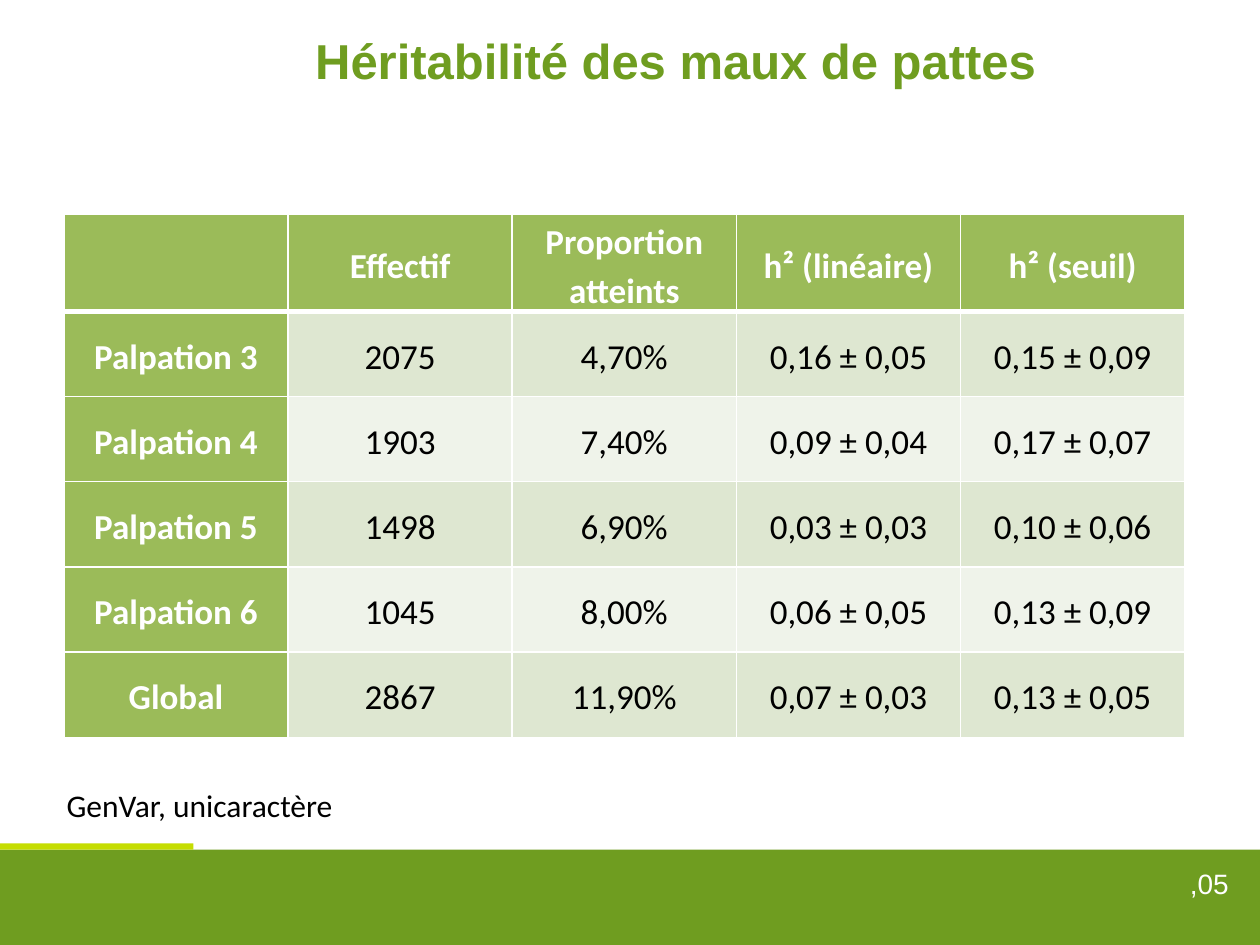
from lxml.etree import SubElement
from pptx import Presentation
from pptx.dml.color import RGBColor
from pptx.enum.shapes import MSO_SHAPE as Preset
from pptx.enum.text import MSO_ANCHOR as Anchor, PP_ALIGN as Align
from pptx.oxml.ns import qn
from pptx.util import Pt

WHITE, BLACK = "FFFFFF", "000000"
GREEN, LIME, HEADING = "6F9D20", "C5DD01", "9BBB59"
BANDS = ["DEE7D1", "EFF3EA"]

HERITABILITY = [
    ["", "Effectif", "Proportion atteints", "h² (linéaire)", "h² (seuil)"],
    ["Palpation 3", "2075", "4,70%", "0,16 ± 0,05", "0,15 ± 0,09"],
    ["Palpation 4", "1903", "7,40%", "0,09 ± 0,04", "0,17 ± 0,07"],
    ["Palpation 5", "1498", "6,90%", "0,03 ± 0,03", "0,10 ± 0,06"],
    ["Palpation 6", "1045", "8,00%", "0,06 ± 0,05", "0,13 ± 0,09"],
    ["Global", "2867", "11,90%", "0,07 ± 0,03", "0,13 ± 0,05"],
]


def color(hex_value):
    return RGBColor.from_string(hex_value)


def apply(target, formats):
    for name, value in formats.items():
        setattr(target, name, value)


def paint(item, hex_value):
    item.fill.solid()
    item.fill.fore_color.rgb = color(hex_value)


class SlideBuilder:
    heading_font = "Arial"
    body_font = "Calibri"
    cell_format = {
        "vertical_anchor": Anchor.MIDDLE,
        "margin_left": Pt(5), "margin_right": Pt(5),
        "margin_top": 0, "margin_bottom": 0,
    }

    def __init__(self, slide):
        self.slide = slide

    def add_text(self, frame, text, size, font, ink, bold=False, **paragraph_format):
        frame.word_wrap = True
        paragraph = frame.paragraphs[0]
        apply(paragraph, paragraph_format)
        run = paragraph.add_run()
        run.text = text
        apply(run.font, {"size": Pt(size), "name": font, "bold": bold})
        run.font.color.rgb = color(ink)

    def title(self, text, left, top, width, height):
        heading = self.slide.shapes.title
        apply(heading, {"left": Pt(left), "top": Pt(top),
                        "width": Pt(width), "height": Pt(height)})
        paint(heading, WHITE)
        heading.text_frame.vertical_anchor = Anchor.MIDDLE
        self.add_text(heading.text_frame, text, 28, self.heading_font, GREEN,
                      bold=True, alignment=Align.CENTER)

    def bar(self, hex_value, *box):
        band = self.slide.shapes.add_shape(Preset.RECTANGLE, *map(Pt, box))
        band.shadow.inherit = False
        paint(band, hex_value)
        band.line.fill.background()

    def label(self, text, box, size, font, ink, align=Align.LEFT):
        frame = self.slide.shapes.add_textbox(*map(Pt, box)).text_frame
        self.add_text(frame, text, size, font, ink, alignment=align)

    def border(self, cell, widths):
        properties = cell._tc.get_or_add_tcPr()
        for side, width in widths.items():
            line = SubElement(properties, qn(f"a:ln{side}"), w=str(Pt(width)))
            fill = SubElement(line, qn("a:solidFill"))
            SubElement(fill, qn("a:srgbClr"), val=WHITE)

    def table(self, rows, left, top, width, header_height, row_height):
        heights = [header_height] + [row_height] * (len(rows) - 1)
        grid = self.slide.shapes.add_table(
            len(rows), len(rows[0]), Pt(left), Pt(top), Pt(width), Pt(sum(heights))
        ).table
        grid.horz_banding = False
        for column in grid.columns:
            column.width = Pt(width / len(rows[0]))
        for r, values in enumerate(rows):
            grid.rows[r].height = Pt(heights[r])
            for c, value in enumerate(values):
                cell = grid.cell(r, c)
                is_heading = r == 0 or c == 0
                self.border(cell, {"L": 1, "R": 1, "T": 3 if r == 1 else 1,
                                   "B": 3 if r == 0 else 1})
                paint(cell, HEADING if is_heading else BANDS[(r - 1) % 2])
                apply(cell, self.cell_format)
                if value:
                    self.add_text(cell.text_frame, value, 20, self.body_font,
                                  WHITE if is_heading else BLACK, bold=is_heading,
                                  alignment=Align.CENTER, line_spacing=1.15)


def main():
    deck = Presentation()
    apply(deck, {"slide_width": Pt(720), "slide_height": Pt(540)})
    page = SlideBuilder(deck.slides.add_slide(deck.slide_layouts[5]))

    page.bar(GREEN, 0, 485.5, 720, 54.5)
    page.bar(LIME, 0, 481.9, 110.6, 3.6)
    page.label(",05", (620.6, 491.8, 88.6, 19.4), 16, page.heading_font,
               WHITE, Align.RIGHT)
    page.title("Héritabilité des maux de pattes", 65.5, 13.7, 641, 41)
    page.table(HERITABILITY, 36.5, 122.6, 640.5, 52, 48.7)
    page.label("GenVar, unicaractère", (31, 445.7, 266.4, 28.8), 18,
               page.body_font, BLACK)

    deck.save("out.pptx")


if __name__ == "__main__":
    main()
